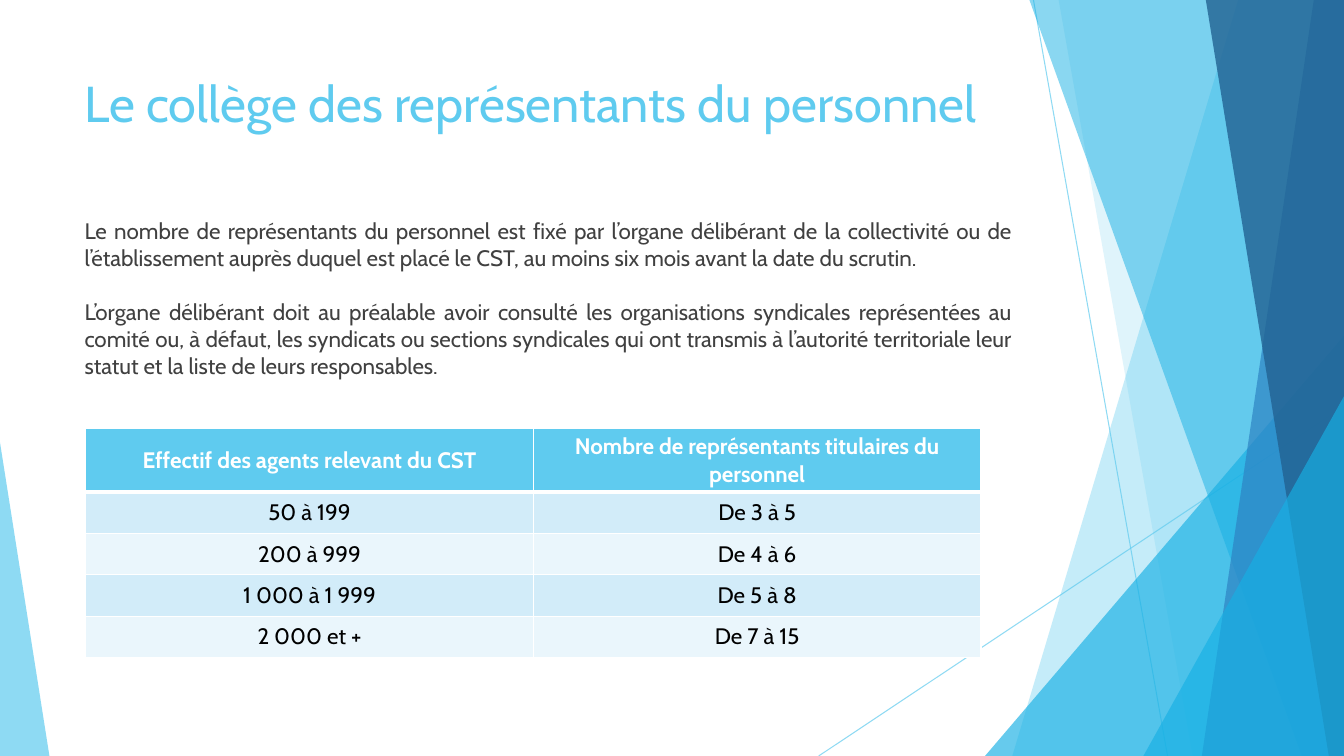
"""Build the slide on the staff representatives' college."""
from lxml.etree import SubElement
from pptx import Presentation
from pptx.dml.color import RGBColor
from pptx.enum.shapes import MSO_CONNECTOR, MSO_SHAPE
from pptx.enum.text import MSO_ANCHOR, PP_ALIGN
from pptx.oxml.ns import qn
from pptx.util import Inches, Pt

WIDTH, HEIGHT = 13.33, 7.5
FONT = "Cabin"
SKY, AZURE, BLUE, NAVY = "5FCBEF", "17B0E4", "2E83C3", "226292"
WHITE, BLACK, GREY = "FFFFFF", "000000", "404040"
BANDS = ("D2ECF9", "EAF6FC")
TITLE = "Le collège des représentants du personnel"
RULES = (
    "Le nombre de représentants du personnel est fixé par l’organe délibérant de la "
    "collectivité ou de l’établissement auprès duquel est placé le CST, au moins six "
    "mois avant la date du scrutin.",
    "L’organe délibérant doit au préalable avoir consulté les organisations syndicales "
    "représentées au comité ou, à défaut, les syndicats ou sections syndicales qui ont "
    "transmis à l’autorité territoriale leur statut et la liste de leurs responsables.",
)
SEATS = (
    ("Effectif des agents relevant du CST", "Nombre de représentants titulaires du personnel"),
    ("50 à 199", "De 3 à 5"),
    ("200 à 999", "De 4 à 6"),
    ("1 000 à 1 999", "De 5 à 8"),
    ("2 000 et +", "De 7 à 15"),
)


def color(code):
    """Turn a hex string into a colour."""
    return RGBColor.from_string(code)


def set_all(target, formats):
    """Set every attribute of a dict on the target."""
    for name, value in formats.items():
        setattr(target, name, value)


def set_alpha(shape, percent):
    """Make the shape's colour partly transparent."""
    for tone in shape._element.spPr.iter(qn("a:srgbClr")):
        SubElement(tone, qn("a:alpha"), val=str(percent * 1000))


def paint(shape, tone, opacity):
    """Give a shape a flat translucent fill without outline or shadow."""
    shape.shadow.inherit = False
    shape.fill.solid()
    shape.fill.fore_color.rgb = color(tone)
    shape.line.fill.background()
    set_alpha(shape, opacity)


def add_ray(slide, start, end):
    """Draw a thin decorative line."""
    ray = slide.shapes.add_connector(
        MSO_CONNECTOR.STRAIGHT, *(Inches(v) for v in start + end))
    ray.line.color.rgb = color(SKY)
    ray.line.width = Pt(0.75)
    set_alpha(ray, 70)
    SubElement(ray._element.spPr, qn("a:effectLst"))


def add_facet(slide, top_x, bottom_x, tone, opacity):
    """Draw a facet from a slanted left edge to the right side of the slide."""
    builder = slide.shapes.build_freeform(Inches(top_x), 0)
    corners = ((WIDTH, 0), (WIDTH, HEIGHT), (bottom_x, HEIGHT))
    builder.add_line_segments([(Inches(x), Inches(y)) for x, y in corners])
    paint(builder.convert_to_shape(), tone, opacity)


def add_corner(slide, left, top, width, peak, tone, opacity):
    """Draw a right triangle standing on the bottom of the slide."""
    corner = slide.shapes.add_shape(
        MSO_SHAPE.ISOSCELES_TRIANGLE, Inches(left), Inches(top),
        Inches(width), Inches(HEIGHT - top))
    corner.adjustments[0] = peak
    paint(corner, tone, opacity)


def write(paragraph, text, size, tone, align, bold=False):
    """Write one formatted run in a paragraph."""
    paragraph.alignment = align
    run = paragraph.add_run()
    run.text = text
    set_all(run.font, {"name": FONT, "size": Pt(size), "bold": bold})
    run.font.color.rgb = color(tone)


def add_text(slide, top, height, texts, size, tone, align):
    """Add a text box in the main column."""
    box = slide.shapes.add_textbox(Inches(0.74), Inches(top), Inches(9.4), Inches(height))
    frame = box.text_frame
    set_all(frame, {"word_wrap": True, "vertical_anchor": MSO_ANCHOR.TOP})
    for index, text in enumerate(texts):
        paragraph = frame.add_paragraph() if index else frame.paragraphs[0]
        paragraph.space_before = Pt(19 if index else 0)
        write(paragraph, text, size, tone, align)


def add_borders(cell, widths):
    """Draw white cell borders with a width in points for each side."""
    properties = cell._tc.get_or_add_tcPr()
    for side, width in widths.items():
        border = SubElement(properties, qn(f"a:ln{side}"), w=str(Pt(width)))
        fill = SubElement(border, qn("a:solidFill"))
        SubElement(fill, qn("a:srgbClr"), val=WHITE)


def add_seats(slide):
    """Add the table of seats by headcount."""
    table = slide.shapes.add_table(
        len(SEATS), 2, Inches(0.85), Inches(4.25), Inches(8.88), Inches(2.26)).table
    for row_index, row in enumerate(SEATS):
        header = row_index == 0
        table.rows[row_index].height = Inches(0.62 if header else 0.41)
        for column_index, text in enumerate(row):
            cell = table.cell(row_index, column_index)
            cell.vertical_anchor = MSO_ANCHOR.MIDDLE
            add_borders(cell, {"L": 1, "R": 1, "T": 3 if row_index == 1 else 1,
                               "B": 3 if header else 1})
            cell.fill.solid()
            cell.fill.fore_color.rgb = color(SKY if header else BANDS[(row_index - 1) % 2])
            write(cell.text_frame.paragraphs[0], text, 16, WHITE if header else BLACK,
                  PP_ALIGN.CENTER, header)


def add_backdrop(slide):
    """Draw the blue facets from back to front."""
    add_ray(slide, (10.25, 0), (11.58, HEIGHT))
    add_ray(slide, (WIDTH, 4.03), (8.12, HEIGHT))
    add_facet(slide, 12.28, 10.04, SKY, 36)
    add_facet(slide, 10.5, 11.83, SKY, 20)
    add_corner(slide, 9.77, 3.33, 3.56, 1, AZURE, 66)
    add_facet(slide, 10.21, 12.91, AZURE, 50)
    add_facet(slide, 13.03, 11.92, BLUE, 70)
    add_facet(slide, 11.96, 13.18, NAVY, 80)
    add_corner(slide, 11.34, 3.93, 1.99, 1, AZURE, 66)
    add_corner(slide, 0, 4.39, 0.49, 0, SKY, 70)


def main():
    """Build and save the slide."""
    deck = Presentation()
    set_all(deck, {"slide_width": Inches(WIDTH), "slide_height": Inches(HEIGHT)})
    slide = deck.slides.add_slide(deck.slide_layouts[6])
    add_backdrop(slide)
    add_text(slide, 0.67, 1.44, (TITLE,), 36, SKY, PP_ALIGN.LEFT)
    add_text(slide, 2.11, 2, RULES, 16, GREY, PP_ALIGN.JUSTIFY)
    add_seats(slide)
    deck.save("out.pptx")


if __name__ == "__main__":
    main()
